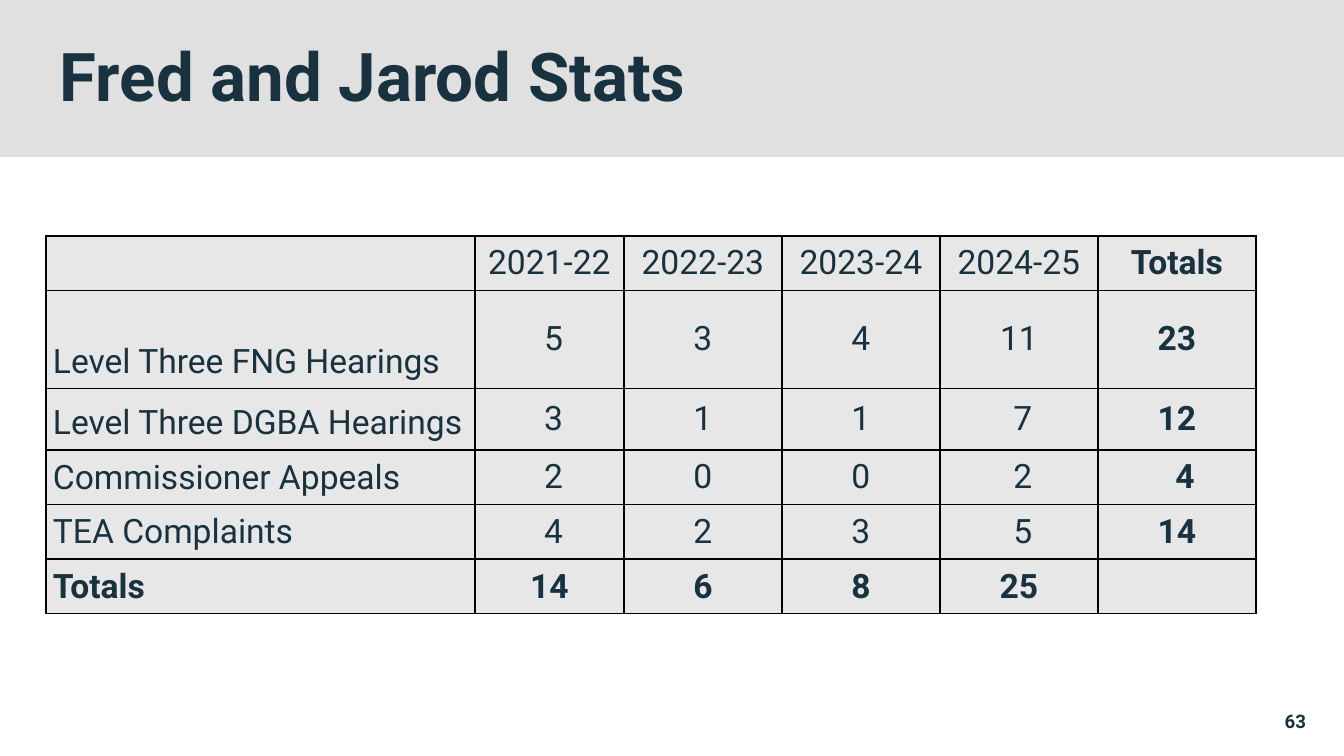
import dataclasses

import lxml.etree
import pptx
import pptx.dml.color
import pptx.enum.shapes
import pptx.enum.text
import pptx.oxml.ns
import pptx.util

ALIGN = pptx.enum.text.PP_ALIGN
ANCHOR = pptx.enum.text.MSO_ANCHOR
qn = pptx.oxml.ns.qn


@dataclasses.dataclass(frozen=True)
class Theme:
    font: str = "Roboto"
    ink: str = "193240"
    band: str = "D9D9D9"
    cell: str = "E7E7E7"
    border: str = "000000"
    title: int = 36
    body: int = 18
    number: int = 10


def px(n):
    return pptx.util.Emu(round(n * 914400 / 134.4))


def rgb(color):
    return pptx.dml.color.RGBColor.from_string(color)


class Deck:
    def __init__(self, width, height, theme):
        self.theme = theme
        self.prs = pptx.Presentation()
        self.prs.slide_width, self.prs.slide_height = px(width), px(height)
        self.s = None

    def slide(self):
        self.s = self.prs.slides.add_slide(self.prs.slide_layouts[6])

    def set_text(self, tf, text, size, bold=False, align=ALIGN.LEFT):
        tf.text = text
        p = tf.paragraphs[0]
        p.alignment = align
        for r in p.runs:
            r.font.name = self.theme.font
            r.font.size = pptx.util.Pt(size)
            r.font.bold = bold
            r.font.color.rgb = rgb(self.theme.ink)
        return p

    def band(self, x, y, w, h, opacity):
        sp = self.s.shapes.add_shape(
            pptx.enum.shapes.MSO_SHAPE.RECTANGLE, px(x), px(y), px(w), px(h))
        sp.shadow.inherit = False
        sp.line.fill.background()
        sp.fill.solid()
        sp.fill.fore_color.rgb = rgb(self.theme.band)
        color = sp._element.spPr.find(qn("a:solidFill"))[0]
        lxml.etree.SubElement(color, qn("a:alpha"), val=str(opacity * 1000))

    def text(self, x, y, w, h, text, size, align=ALIGN.LEFT, spacing=1.0):
        tf = self.s.shapes.add_textbox(px(x), px(y), px(w), px(h)).text_frame
        tf.word_wrap = True
        tf.vertical_anchor = ANCHOR.MIDDLE
        tf.margin_left = tf.margin_top = tf.margin_right = tf.margin_bottom = 0
        self.set_text(tf, text, size, True, align).line_spacing = spacing

    def borders(self, cell):
        tcPr = cell._tc.get_or_add_tcPr()
        for i, side in enumerate(("lnL", "lnR", "lnT", "lnB")):
            ln = lxml.etree.Element(qn(f"a:{side}"), w=str(pptx.util.Pt(1)))
            fill = lxml.etree.SubElement(ln, qn("a:solidFill"))
            lxml.etree.SubElement(fill, qn("a:srgbClr"), val=self.theme.border)
            tcPr.insert(i, ln)

    def table(self, x, y, widths, heights, rows, nudges):
        frame = self.s.shapes.add_table(
            len(rows), len(widths), px(x), px(y), px(sum(widths)), px(sum(heights)))
        table = frame.table
        for column, width in zip(table.columns, widths):
            column.width = px(width)
        for row, height in zip(table.rows, heights):
            row.height = px(height)
        last_row, last_col = len(rows) - 1, len(widths) - 1
        for i, row in enumerate(rows):
            for j, text in enumerate(row):
                cell = table.cell(i, j)
                cell.fill.solid()
                cell.fill.fore_color.rgb = rgb(self.theme.cell)
                cell.margin_top = cell.margin_right = cell.margin_bottom = px(7)
                cell.margin_left = px(7 + nudges.get((i, j), 0))
                at_bottom = j == 0 or i == last_row
                cell.vertical_anchor = ANCHOR.BOTTOM if at_bottom else ANCHOR.MIDDLE
                self.borders(cell)
                if text:
                    self.set_text(cell.text_frame, text, self.theme.body,
                                  i == last_row or j == last_col,
                                  ALIGN.CENTER if j else ALIGN.LEFT)


def main():
    theme = Theme()
    deck = Deck(1344, 756, theme)
    deck.slide()
    deck.band(0, 0, 1344, 157, 81)
    deck.text(1004, 710, 302, 23, "63", theme.number, ALIGN.RIGHT)
    deck.text(60, 43, 1250, 74, "Fred and Jarod Stats", theme.title, spacing=0.9)

    rows = [
        ("", "2021-22", "2022-23", "2023-24", "2024-25", "Totals"),
        ("Level Three FNG Hearings", "5", "3", "4", "11", "23"),
        ("Level Three DGBA Hearings", "3", "1", "1", "7", "12"),
        ("Commissioner Appeals", "2", "0", "0", "2", "4"),
        ("TEA Complaints", "4", "2", "3", "5", "14"),
        ("Totals", "14", "6", "8", "25", ""),
    ]
    nudges = {(i, 1): 8 for i in range(1, 5)}
    nudges.update({(i, 4): 8 for i in range(2, 5)})
    nudges[3, 5] = 16
    deck.table(46, 236, [429, 149] + [158] * 4, [52, 98, 62] + [53] * 3, rows, nudges)
    deck.prs.save("out.pptx")


if __name__ == "__main__":
    main()
